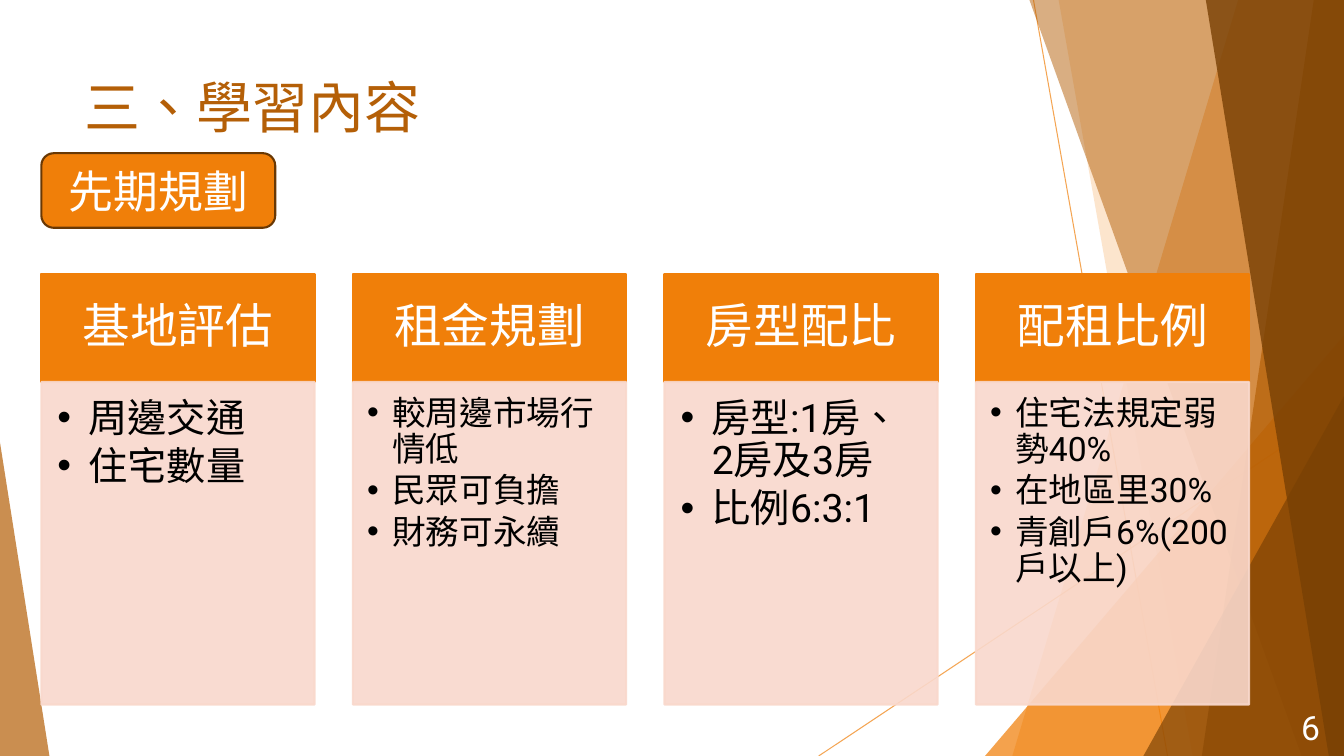
from lxml import etree
from pptx import Presentation
from pptx.dml.color import RGBColor
from pptx.enum.shapes import MSO_CONNECTOR, MSO_SHAPE
from pptx.enum.text import MSO_ANCHOR, PP_ALIGN
from pptx.oxml.ns import qn
from pptx.util import Inches, Pt

STRAIGHT = MSO_CONNECTOR.STRAIGHT
RECTANGLE = MSO_SHAPE.RECTANGLE
ROUNDED = MSO_SHAPE.FLOWCHART_ALTERNATE_PROCESS
TOP, MIDDLE = MSO_ANCHOR.TOP, MSO_ANCHOR.MIDDLE
LEFT, CENTER, RIGHT = PP_ALIGN.LEFT, PP_ALIGN.CENTER, PP_ALIGN.RIGHT

ORANGE = RGBColor(0xF0, 0x7F, 0x09)
RUST = RGBColor(0xB4, 0x5F, 0x07)
BROWN = RGBColor(0x78, 0x40, 0x04)
DARK_EDGE = RGBColor(0x69, 0x38, 0x04)
PINK = RGBColor(0xF9, 0xD8, 0xCC)
WHITE = RGBColor(0xFF, 0xFF, 0xFF)
BLACK = RGBColor(0, 0, 0)
LATIN_FONT, ASIAN_FONT, BULLET_FONT = "Roboto", "Noto Sans CJK SC", "Arial"
LANGUAGE = "zh-TW"

WIDTH, HEIGHT = 13.33, 7.5
TITLE = "三、學習內容"
STAGE = "先期規劃"
PAGE_NUMBER = "6"
CARDS = [
    ("基地評估", 28, ["周邊交通", "住宅數量"]),
    ("租金規劃", 24, ["較周邊市場行情低", "民眾可負擔", "財務可永續"]),
    ("房型配比", 28, ["房型:1房、2房及3房", "比例6:3:1"]),
    ("配租比例", 24, ["住宅法規定弱勢40%", "在地區里30%", "青創戶6%(200戶以上)"]),
]
CARD_LEFT, CARD_STEP, CARD_WIDTH = 0.41, 3.09, 2.71
HEAD_TOP, HEAD_HEIGHT, BODY_HEIGHT = 2.72, 1.07, 3.2
BULLET_INDENT = {28: 0.31, 24: 0.25}
BODY_INSETS = {28: (0.16, 0.16, 0.22, 0.24), 24: (0.14, 0.14, 0.19, 0.21)}

RAYS = [((10.25, 0), (11.58, HEIGHT)), ((WIDTH, 4.03), (8.12, HEIGHT))]
RIGHT_EDGE = [(WIDTH, 0), (WIDTH, HEIGHT)]
RIGHT_CORNER = [(WIDTH, HEIGHT)]
FACETS = [
    ([(12.28, 0), *RIGHT_EDGE, (10.04, HEIGHT)], ORANGE, 36),
    ([(10.5, 0), *RIGHT_EDGE, (11.83, HEIGHT)], ORANGE, 20),
    ([(WIDTH, 3.33), *RIGHT_CORNER, (9.77, HEIGHT)], ORANGE, 72),
    ([(10.21, 0), *RIGHT_EDGE, (12.91, HEIGHT)], RUST, 50),
    ([(13.03, 0), *RIGHT_EDGE, (11.92, HEIGHT)], RUST, 70),
    ([(11.96, 0), *RIGHT_EDGE, (13.18, HEIGHT)], BROWN, 80),
    ([(WIDTH, 3.93), *RIGHT_CORNER, (11.34, HEIGHT)], BROWN, 66),
    ([(0, 4.39), (0.49, HEIGHT), (0, HEIGHT)], RUST, 70),
]


def set_opacity(fill, color, percent):
    fill.solid()
    fill.fore_color.rgb = color
    if percent < 100:
        tone = fill._xPr.find(qn("a:solidFill"))[0]
        etree.SubElement(tone, qn("a:alpha"), val=str(percent * 1000))


def add_ray(page, start, end):
    ray = page.shapes.add_connector(STRAIGHT, *map(Inches, start + end))
    set_opacity(ray.line.fill, ORANGE, 70)
    ray.line.width = Pt(0.75)
    etree.SubElement(ray._element.spPr, qn("a:effectLst"))


def add_facet(page, points, color, opacity):
    corners = [(Inches(x), Inches(y)) for x, y in points]
    outline = page.shapes.build_freeform(*corners[0])
    outline.add_line_segments(corners[1:], close=True)
    facet = outline.convert_to_shape()
    facet.shadow.inherit = False
    set_opacity(facet.fill, color, opacity)
    facet.line.fill.background()


def add_block(page, kind, place, color, edge, opacity=100):
    block = page.shapes.add_shape(kind, *map(Inches, place))
    block.shadow.inherit = False
    set_opacity(block.fill, color, opacity)
    set_opacity(block.line.fill, edge, opacity)
    block.line.width = Pt(1.5)
    return block


def write(box, lines, size, color, align=LEFT, anchor=MIDDLE,
          insets=(0.1, 0.05, 0.1, 0.05), spacing=None, indent=0, latin=LATIN_FONT):
    frame = box.text_frame
    frame.word_wrap = True
    frame.vertical_anchor = anchor
    (frame.margin_left, frame.margin_top,
     frame.margin_right, frame.margin_bottom) = map(Inches, insets)
    frame.text = "\n".join(lines)
    for para in frame.paragraphs:
        para.alignment = align
        properties = para._p.get_or_add_pPr()
        if spacing:
            para.line_spacing = spacing
        if indent:
            para.space_after = Pt(round(size * 0.15, 1))
            properties.set("marL", str(Inches(indent)))
            properties.set("indent", str(-Inches(indent)))
            etree.SubElement(properties, qn("a:buFont"), typeface=BULLET_FONT)
            etree.SubElement(properties, qn("a:buChar"), char="•")
        para.font.size = Pt(size)
        para.font.color.rgb = color
        para.font.name = latin
        etree.SubElement(properties.find(qn("a:defRPr")), qn("a:ea"), typeface=ASIAN_FONT)
        for span in para.runs:
            span._r.get_or_add_rPr().set("lang", LANGUAGE)


def add_card(page, left, heading, size, points):
    head = add_block(page, RECTANGLE, (left, HEAD_TOP, CARD_WIDTH, HEAD_HEIGHT), ORANGE, ORANGE)
    write(head, [heading], 34, WHITE, CENTER, insets=(0.26, 0.15, 0.26, 0.15), spacing=0.9)
    body_place = (left, HEAD_TOP + HEAD_HEIGHT, CARD_WIDTH, BODY_HEIGHT)
    body = add_block(page, RECTANGLE, body_place, PINK, PINK, 90)
    write(body, points, size, BLACK, anchor=TOP, insets=BODY_INSETS[size],
          spacing=0.9, indent=BULLET_INDENT[size])


def main():
    deck = Presentation()
    deck.slide_width, deck.slide_height = Inches(WIDTH), Inches(HEIGHT)
    page = deck.slides.add_slide(deck.slide_layouts[6])

    for start, end in RAYS:
        add_ray(page, start, end)
    for points, color, opacity in FACETS:
        add_facet(page, points, color, opacity)

    title = page.shapes.add_textbox(*map(Inches, (0.74, 0.67, 9.4, 1.44)))
    write(title, [TITLE], 40, RUST, anchor=TOP, latin=ASIAN_FONT)
    stage = add_block(page, ROUNDED, (0.41, 1.52, 2.32, 0.74), ORANGE, DARK_EDGE)
    write(stage, [STAGE], 32, WHITE, CENTER)

    for index, (heading, size, points) in enumerate(CARDS):
        add_card(page, CARD_LEFT + index * CARD_STEP, heading, size, points)

    number = page.shapes.add_textbox(*map(Inches, (12.44, 7.01, 0.75, 0.4)))
    write(number, [PAGE_NUMBER], 24, WHITE, RIGHT)
    deck.save("out.pptx")


if __name__ == "__main__":
    main()
